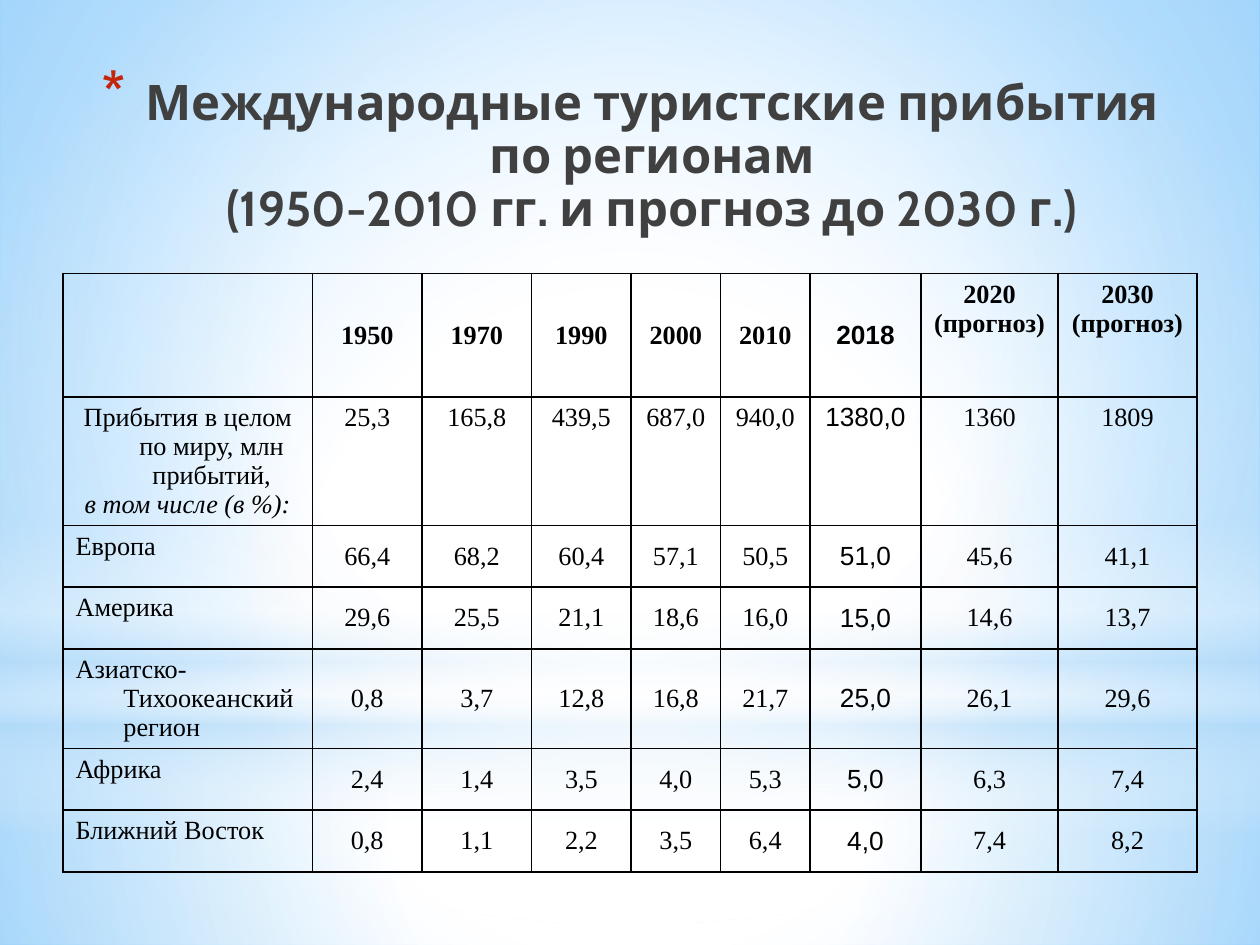
from lxml.etree import SubElement
from pptx import Presentation
from pptx.dml.color import RGBColor
from pptx.enum.shapes import MSO_SHAPE
from pptx.enum.text import MSO_ANCHOR, MSO_AUTO_SIZE, PP_ALIGN
from pptx.oxml import parse_xml
from pptx.oxml.ns import nsdecls, qn
from pptx.util import Emu, Inches, Pt

COLORS = {
    "white": "FFFFFF",
    "sky": "63BCFF",
    "pale": "B4DCFA",
    "title": "404040",
    "bullet": "C3260C",
    "black": "000000",
}


def replace_fill(properties, stops, focus=None):
    """Swap a solid fill for a gradient: (position, color, opacity) stops,
    circular around focus (left, top, right, bottom), or vertical without it."""
    stop_xml = "".join(
        f'<a:gs pos="{position * 1000}"><a:srgbClr val="{COLORS[color]}">'
        f'<a:alpha val="{opacity * 1000}"/></a:srgbClr></a:gs>'
        for position, color, opacity in stops
    )
    if focus:
        sides = " ".join(f'{side}="{share * 1000}"' for side, share in zip("ltrb", focus))
        direction = f'<a:path path="circle"><a:fillToRect {sides}/></a:path>'
    else:
        direction = '<a:lin ang="5400000" scaled="0"/>'
    gradient = parse_xml(
        f'<a:gradFill {nsdecls("a")} rotWithShape="1">'
        f"<a:gsLst>{stop_xml}</a:gsLst>{direction}</a:gradFill>"
    )
    properties.replace(properties.find(qn("a:solidFill")), gradient)


def set_hanging_indent(paragraph, inches):
    properties = paragraph._p.get_or_add_pPr()
    properties.set("marL", str(Inches(inches)))
    properties.set("indent", str(-Inches(inches)))
    return properties


presentation = Presentation()
presentation.slide_width = Inches(10)
presentation.slide_height = Inches(7.5)
width, height = presentation.slide_width, presentation.slide_height
slide = presentation.slides.add_slide(presentation.slide_layouts[5])

# Background
slide.background.fill.solid()
replace_fill(
    next(slide.element.iter(qn("p:bgPr"))),
    [(0, "white", 100), (42, "white", 100), (100, "sky", 100)],
    (24, 44, 24, 12),
)

# Soft light layers: shape, top and height as shares of the slide, stops, focus
CENTER = (50, 50, 50, 50)
layers = [
    (MSO_SHAPE.RECTANGLE, 0.744, 0.256,
     [(0, "white", 91), (37, "white", 76), (100, "pale", 79)], CENTER),
    (MSO_SHAPE.RECTANGLE, 0, 0.744,
     [(0, "white", 89), (48, "white", 62), (100, "pale", 79)], CENTER),
    (MSO_SHAPE.RECTANGLE, 0.55, 0.333,
     [(0, "white", 0), (29, "white", 30), (45, "pale", 40),
      (55, "white", 26), (65, "pale", 60), (100, "white", 0)], None),
    (MSO_SHAPE.OVAL, 0.233, 0.744,
     [(0, "white", 100), (56, "white", 0)], CENTER),
]
for kind, top, share, stops, focus in layers:
    shape = slide.shapes.add_shape(kind, 0, Emu(int(top * height)), width, Emu(int(share * height)))
    shape.shadow.inherit = False
    shape.line.fill.background()
    shape.fill.solid()
    replace_fill(shape.element.spPr, stops, focus)

# Title, brought in front of the layers
title = slide.shapes.title
slide.shapes.element.append(title.element)
title.left, title.top = Inches(0.5), Inches(0.5)
title.width, title.height = Inches(9), Inches(1.5)
title.text_frame.word_wrap = True
title.text_frame.auto_size = MSO_AUTO_SIZE.NONE
title.text_frame.vertical_anchor = MSO_ANCHOR.MIDDLE
paragraph = title.text_frame.paragraphs[0]
paragraph.alignment = PP_ALIGN.CENTER
paragraph.line_spacing = 0.9
title_lines = [
    "Международные туристские прибытия по регионам",
    "(1950-2010 гг. и прогноз до 2030 г.)",
]
for index, line in enumerate(title_lines):
    if index:
        paragraph.add_line_break()
    run = paragraph.add_run()
    run.text = line
    run.font.name = "Cabin"
    run.font.size = Pt(28)
    run.font.bold = True
    run.font.color.rgb = RGBColor.from_string(COLORS["title"])
properties = set_hanging_indent(paragraph, 0.35)
SubElement(SubElement(properties, qn("a:buClr")), qn("a:srgbClr"), val=COLORS["bullet"])
SubElement(properties, qn("a:buSzPct"), val="128000")
SubElement(properties, qn("a:buChar"), char="*")

# Table: each cell holds its paragraphs, separated by a line end
rows = [
    ["", "1950", "1970", "1990", "2000", "2010", "2018", "2020\n(прогноз)", "2030\n(прогноз)"],
    ["Прибытия в целом по миру, млн прибытий,\nв том числе (в %):",
     "25,3", "165,8", "439,5", "687,0", "940,0", "1380,0", "1360", "1809"],
    ["Европа", "66,4", "68,2", "60,4", "57,1", "50,5", "51,0", "45,6", "41,1"],
    ["Америка", "29,6", "25,5", "21,1", "18,6", "16,0", "15,0", "14,6", "13,7"],
    ["Азиатско-Тихоокеанский регион",
     "0,8", "3,7", "12,8", "16,8", "21,7", "25,0", "26,1", "29,6"],
    ["Африка", "2,4", "1,4", "3,5", "4,0", "5,3", "5,0", "6,3", "7,4"],
    ["Ближний Восток", "0,8", "1,1", "2,2", "3,5", "6,4", "4,0", "7,4", "8,2"],
]
column_widths = [1.98, 0.87, 0.87, 0.79, 0.71, 0.71, 0.88, 1.09, 1.1]
row_heights = [0.98, 0.81] + [0.49] * 5
ACTUAL_COLUMN, FORECAST_COLUMN = 6, 7

table = slide.shapes.add_table(
    len(rows), len(column_widths), Inches(0.5), Inches(2.17),
    Inches(sum(column_widths)), Inches(sum(row_heights)),
).table
table.first_row = False
table.horz_banding = False
for column, inches in zip(table.columns, column_widths):
    column.width = Inches(inches)
for row, inches in zip(table.rows, row_heights):
    row.height = Inches(inches)

for row_index, texts in enumerate(rows):
    for column_index, text in enumerate(texts):
        cell = table.cell(row_index, column_index)
        cell_properties = cell._tc.get_or_add_tcPr()
        for side in ("lnL", "lnR", "lnT", "lnB"):
            border = SubElement(cell_properties, qn(f"a:{side}"), w=str(Pt(1)))
            SubElement(SubElement(border, qn("a:solidFill")), qn("a:srgbClr"), val=COLORS["black"])
        cell.fill.background()

        is_label = column_index == 0
        is_top = is_label or row_index == 1 or (row_index == 0 and column_index >= FORECAST_COLUMN)
        cell.vertical_anchor = MSO_ANCHOR.TOP if is_top else MSO_ANCHOR.MIDDLE
        for line_index, line in enumerate(text.split("\n") if text else []):
            frame = cell.text_frame
            paragraph = frame.add_paragraph() if line_index else frame.paragraphs[0]
            paragraph.alignment = PP_ALIGN.LEFT if is_label and row_index > 1 else PP_ALIGN.CENTER
            set_hanging_indent(paragraph, 0.38)
            run = paragraph.add_run()
            run.text = line
            run.font.name = "Arial" if column_index == ACTUAL_COLUMN else "Times New Roman"
            run.font.size = Pt(15)
            run.font.bold = row_index == 0
            run.font.italic = is_label and line_index == 1
            run.font.color.rgb = RGBColor.from_string(COLORS["black"])

presentation.save("out.pptx")
